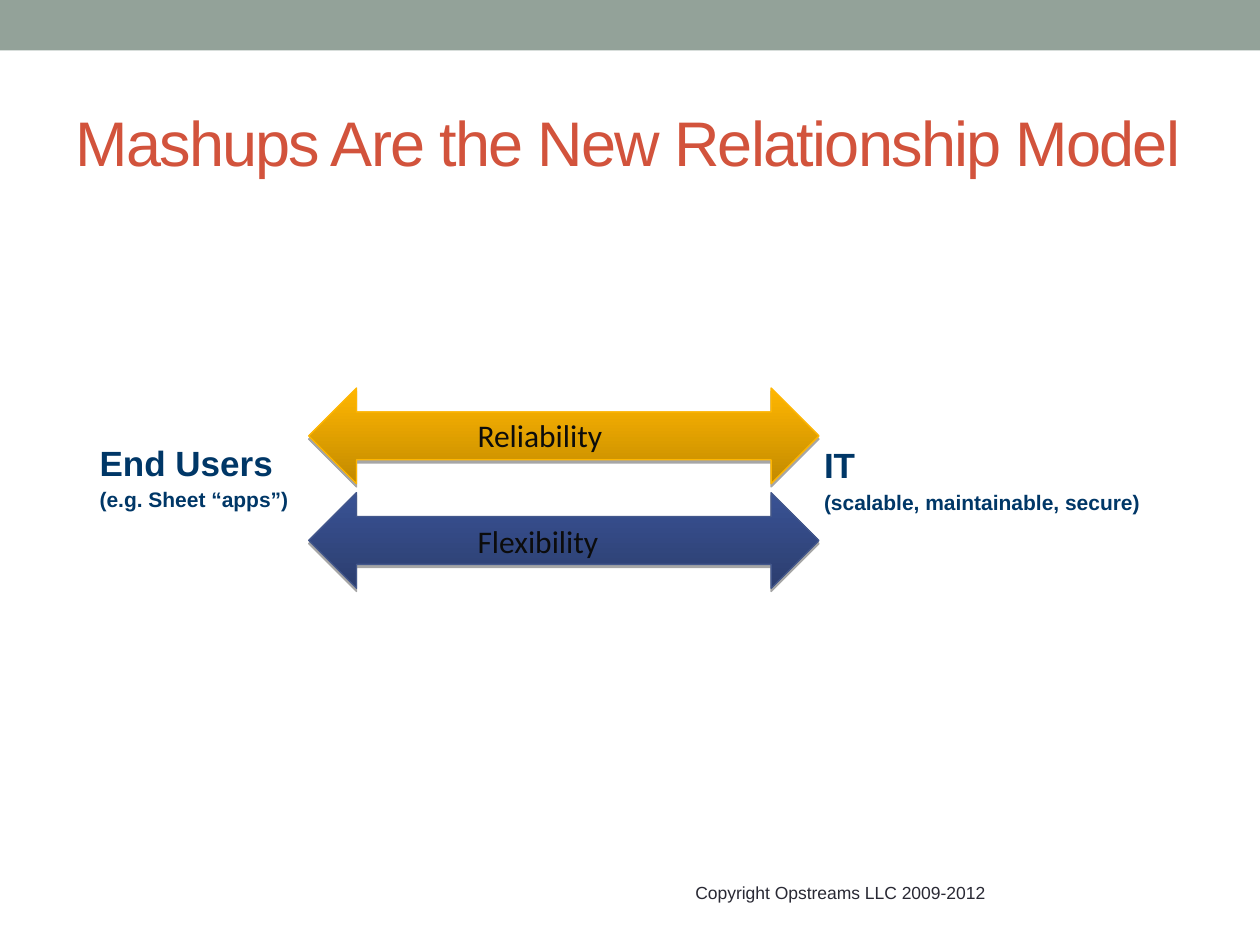
from dataclasses import dataclass

from lxml.etree import SubElement
from pptx import Presentation
from pptx.dml.color import RGBColor
from pptx.enum.shapes import MSO_SHAPE as Shape
from pptx.enum.text import MSO_ANCHOR as Anchor
from pptx.oxml import parse_xml
from pptx.oxml.ns import nsdecls, qn
from pptx.util import Inches, Pt


@dataclass(frozen=True)
class Theme:
    heading_font: str = "Arial"
    arrow_font: str = "Calibri"
    band: str = "93A299"
    title: str = "D2533C"
    party: str = "003767"
    arrow_text: str = "0C0C0C"
    footer: str = "292934"
    title_size: int = 36
    party_size: int = 20
    arrow_size: int = 18
    detail_size: int = 12
    footer_size: int = 10


theme = Theme()
rgb = RGBColor.from_string

deck = Presentation()
deck.slide_width, deck.slide_height = Inches(10), Inches(7.5)
slide = deck.slides.add_slide(deck.slide_layouts[6])


def add_text_frame(left, top, width, height, inset=None, wrap=True):
    box = slide.shapes.add_textbox(
        Inches(left), Inches(top), Inches(width), Inches(height))
    frame = box.text_frame
    frame.word_wrap = wrap
    if inset is not None:
        frame.margin_left = frame.margin_right = Inches(inset)
        frame.margin_top = frame.margin_bottom = Inches(inset)
    return frame


def add_run(paragraph, text, font, size, color, bold=False):
    run = paragraph.add_run()
    run.text = text
    run.font.name = font
    run.font.size = Pt(size)
    run.font.bold = bold
    run.font.color.rgb = rgb(color)
    return run


# Top band
band = slide.shapes.add_shape(Shape.RECTANGLE, 0, 0, Inches(10), Inches(0.4))
band.shadow.inherit = False
band.fill.solid()
band.fill.fore_color.rgb = rgb(theme.band)
band.line.fill.background()

# Copyright line
footer = add_text_frame(5.42, 6.95, 2.52, 0.27, wrap=False)
add_run(footer.paragraphs[0], "Copyright Opstreams LLC 2009-2012",
        theme.heading_font, theme.footer_size, theme.footer)

# Title, with tightened letter spacing
title = add_text_frame(0.5, 0.58, 9, 1.08)
title.vertical_anchor = Anchor.MIDDLE
title_run = add_run(title.paragraphs[0], "Mashups Are the New Relationship Model",
                    theme.heading_font, theme.title_size, theme.title)
title_run.font._element.set("spc", "-100")

# The two parties
for left, top, width, name, detail in (
    (0.75, 3.46, 2.72, "End Users", "(e.g. Sheet “apps”)"),
    (6.5, 3.48, 2.76, "IT", "(scalable, maintainable, secure)"),
):
    party = add_text_frame(left, top, width, 0.62, inset=0.04)
    name_line, detail_line = party.paragraphs[0], party.add_paragraph()
    detail_line.space_before = Pt(2)
    for line, text, size in (
        (name_line, name, theme.party_size),
        (detail_line, detail, theme.detail_size),
    ):
        properties = line._p.get_or_add_pPr()
        properties.set("marL", str(Inches(0.17)))
        properties.set("indent", str(Inches(-0.17)))
        SubElement(properties, qn("a:buNone"))
        add_run(line, text, theme.heading_font, size, theme.party, bold=True)

# Arrows between the parties, with their labels
for top, label_top, label, start, end, outline in (
    (3.91, 4.1, "Flexibility", "395294", "2C3E6F", "43578B"),
    (3.08, 3.26, "Reliability", "FFB601", "C28A00", "FEB603"),
):
    arrow = slide.shapes.add_shape(
        Shape.LEFT_RIGHT_ARROW, Inches(2.45), Inches(top), Inches(4.05), Inches(0.76))
    arrow.fill.gradient()
    arrow.fill.gradient_angle = 270
    for stop, color, position in zip(arrow.fill.gradient_stops, (start, end), (0, 1)):
        stop.color.rgb = rgb(color)
        stop.position = position
    arrow.line.color.rgb = rgb(outline)
    arrow.line.width = Pt(0.75)
    arrow.shadow.inherit = False
    effects = arrow._element.spPr.find(qn("a:effectLst"))
    effects.append(parse_xml(
        f'<a:outerShdw {nsdecls("a")} blurRad="0" dist="{Pt(1.8)}" dir="5400000" '
        'rotWithShape="0"><a:srgbClr val="000000"><a:alpha val="35000"/>'
        '</a:srgbClr></a:outerShdw>'))

    caption = add_text_frame(3.75, label_top, 1.51, 0.38, inset=0.04)
    add_run(caption.paragraphs[0], label,
            theme.arrow_font, theme.arrow_size, theme.arrow_text)

deck.save("out.pptx")
